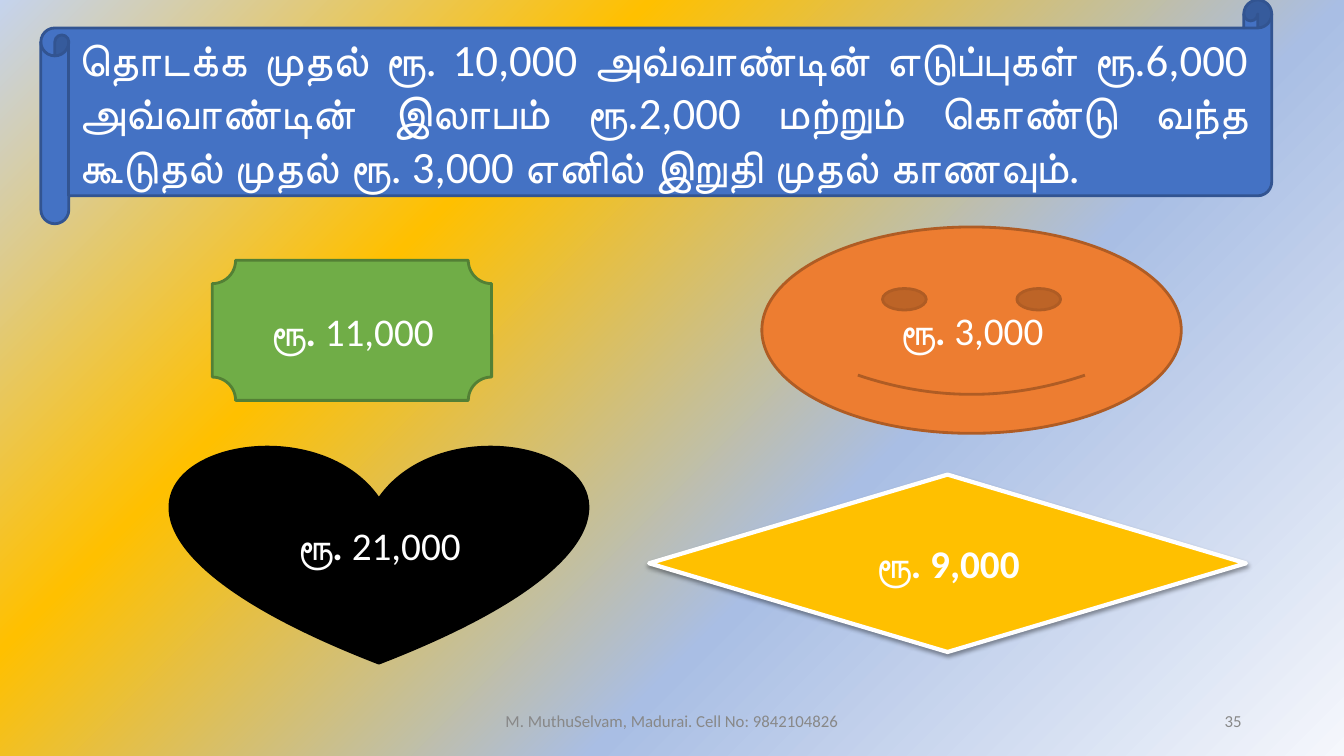
from lxml import etree
from pptx import Presentation
from pptx.dml.color import RGBColor
from pptx.enum.shapes import MSO_SHAPE
from pptx.enum.text import MSO_ANCHOR, PP_ALIGN
from pptx.oxml.ns import qn
from pptx.util import Cm, Pt

LEFT, CENTER, RIGHT, JUSTIFY = PP_ALIGN.LEFT, PP_ALIGN.CENTER, PP_ALIGN.RIGHT, PP_ALIGN.JUSTIFY
MIDDLE = MSO_ANCHOR.MIDDLE
FONT = "Calibri"
COLORS = {
    "white": "FFFFFF", "grey": "888888", "black": "000000",
    "blue": "4472C4", "blue_edge": "325491",
    "green": "70AD47", "green_edge": "538035",
    "orange": "ED7D31", "orange_edge": "AF5C24", "gold": "FFC000",
    "pale_blue": "C5D3ED", "soft_blue": "A9BEE4", "near_white": "F5F7FC",
}

# Content: boxes are left, top, width, height in cm
BACKGROUND = [(0, "pale_blue"), (31, "gold"), (64, "soft_blue"), (100, "near_white")]
QUESTION = ("தொடக்க முதல் ரூ. 10,000 அவ்வாண்டின் எடுப்புகள் ரூ.6,000 "
            "அவ்வாண்டின் இலாபம் ரூ.2,000 மற்றும் கொண்டு வந்த "
            "கூடுதல் முதல் ரூ. 3,000 எனில் இறுதி முதல் காணவும்.")
QUESTION_BOX = (1.03, 0, 31.02, 5.64)
CURRENCY = "ரூ. "
ANSWERS = [  # shape, box, fill, line, line width, amount, bold amount
    (MSO_SHAPE.PLAQUE, (5.35, 6.56, 7.04, 3.53), "green", "green_edge", 2, "11,000", False),
    (MSO_SHAPE.SMILEY_FACE, (19.2, 5.72, 10.57, 5.2), "orange", "orange_edge", 2, "3,000", False),
    (MSO_SHAPE.HEART, (4.32, 11.2, 10.46, 5.51), "black", "black", 2, "21,000", False),
    (MSO_SHAPE.DIAMOND, (16.36, 11.96, 15.04, 4.47), "gold", "white", 3, "9,000", True),
]
FOOTERS = [
    ("M. MuthuSelvam, Madurai. Cell No: 9842104826", (11.22, 17.65, 11.43, 1.02), CENTER),
    ("35", (23.92, 17.65, 7.62, 1.02), RIGHT),
]


def rgb(name):
    return RGBColor.from_string(COLORS[name])


def write(sp, *runs, size=28, color="white", align=CENTER):
    """Fill a shape with one paragraph of (text, bold) runs."""
    tf = sp.text_frame
    tf.word_wrap = True
    tf.vertical_anchor = MIDDLE
    p = tf.paragraphs[0]
    p.alignment = align
    for text, bold in runs:
        r = p.add_run()
        r.text = text
        r.font.name, r.font.size, r.font.bold = FONT, Pt(size), bold
        r.font.color.rgb = rgb(color)


def add_shape(s, kind, box, fill, line, width):
    sp = s.shapes.add_shape(kind, *map(Cm, box))
    sp.shadow.inherit = False
    sp.fill.solid()
    sp.fill.fore_color.rgb = rgb(fill)
    sp.line.color.rgb = rgb(line)
    sp.line.width = Pt(width)
    return sp


def add_color(parent, name):
    return etree.SubElement(parent, qn("a:srgbClr"), val=COLORS[name])


def set_background(s):
    fill = s.background.fill
    fill.gradient()
    fill.gradient_angle = 315
    stops = s.background._cSld.find(".//" + qn("a:gsLst"))
    for gs in list(stops):
        stops.remove(gs)
    for pos, name in BACKGROUND:
        add_color(etree.SubElement(stops, qn("a:gs"), pos=str(pos * 1000)), name)


def add_shadow(sp, blur=3.1, distance=1.6, angle=90, opacity=38):
    effects = sp._element.spPr.find(qn("a:effectLst"))
    shadow = etree.SubElement(effects, qn("a:outerShdw"), blurRad=str(Pt(blur)),
                              dist=str(Pt(distance)), dir=str(angle * 60000), rotWithShape="0")
    etree.SubElement(add_color(shadow, "black"), qn("a:alpha"), val=str(opacity * 1000))


def main():
    prs = Presentation()
    prs.slide_width, prs.slide_height = Cm(33.87), Cm(19.05)
    s = prs.slides.add_slide(prs.slide_layouts[6])
    set_background(s)

    # Question scroll
    sp = add_shape(s, MSO_SHAPE.HORIZONTAL_SCROLL, QUESTION_BOX, "blue", "blue_edge", 2)
    write(sp, (QUESTION, False), size=32, align=JUSTIFY)

    # Answer choices
    for kind, box, fill, line, width, amount, bold in ANSWERS:
        sp = add_shape(s, kind, box, fill, line, width)
        write(sp, (CURRENCY, True), (amount, bold))
        if kind == MSO_SHAPE.DIAMOND:
            add_shadow(sp)

    # Footer and slide number
    for text, box, align in FOOTERS:
        write(s.shapes.add_textbox(*map(Cm, box)), (text, False),
              size=12, color="grey", align=align)

    prs.save("out.pptx")


if __name__ == "__main__":
    main()
